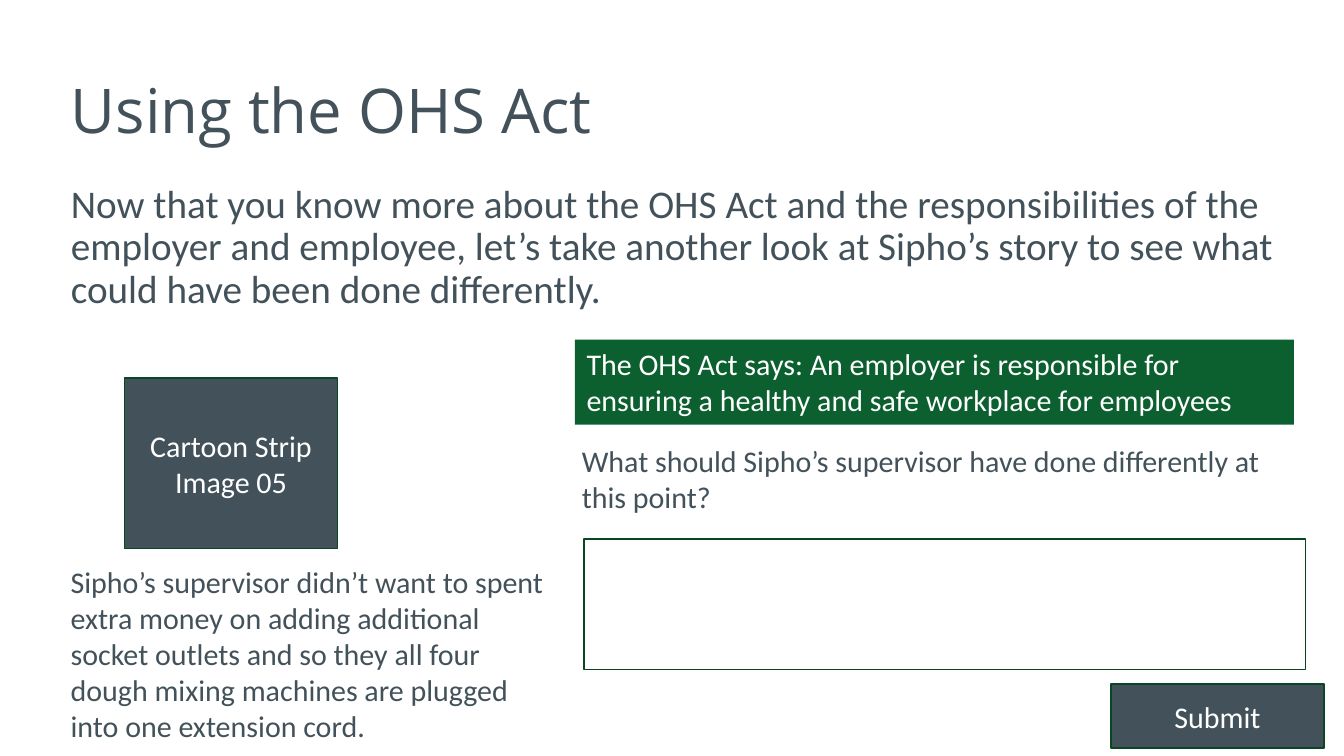
from lxml import etree
from pptx import Presentation
from pptx.dml.color import RGBColor
from pptx.enum.shapes import MSO_SHAPE
from pptx.enum.text import MSO_ANCHOR, MSO_AUTO_SIZE, PP_ALIGN
from pptx.oxml.ns import qn
from pptx.util import Pt

RECTANGLE = MSO_SHAPE.RECTANGLE
TOP, MIDDLE = MSO_ANCHOR.TOP, MSO_ANCHOR.MIDDLE
LEFT, CENTER = PP_ALIGN.LEFT, PP_ALIGN.CENTER
NO_FIT = MSO_AUTO_SIZE.NONE

COLOURS = {"slate": "43525A", "green": "0C6030", "outline": "094724", "white": "FFFFFF"}
TITLE_FONT, BODY_FONT = "Open Sans", "Calibri"


def colour(name):
    return RGBColor.from_string(COLOURS[name])


def place(shape, box):
    for name, value in zip(("left", "top", "width", "height"), box):
        setattr(shape, name, Pt(value))


def write(shape, text, ink="slate", font=BODY_FONT, size=18, anchor=TOP, **paragraph_format):
    frame = shape.text_frame
    frame_format = {"word_wrap": True, "auto_size": NO_FIT, "vertical_anchor": anchor}
    for name, value in frame_format.items():
        setattr(frame, name, value)
    frame.text = text
    paragraph = frame.paragraphs[0]
    for name, value in {"alignment": LEFT, **paragraph_format}.items():
        setattr(paragraph, name, value)
    run_font = paragraph.runs[0].font
    for name, value in {"name": font, "size": Pt(size)}.items():
        setattr(run_font, name, value)
    run_font.color.rgb = colour(ink)
    return paragraph


def add_text(slide, box, text):
    write(slide.shapes.add_textbox(*map(Pt, box)), text)


def add_panel(slide, box, fill=None, line=None):
    panel = slide.shapes.add_shape(RECTANGLE, *map(Pt, box))
    panel.shadow.inherit = False
    if fill:
        panel.fill.solid()
        panel.fill.fore_color.rgb = colour(fill)
    else:
        panel.fill.background()
    if line:
        panel.line.color.rgb = colour(line)
        panel.line.width = Pt(1)
    else:
        panel.line.fill.background()
    return panel


def add_label_panel(slide, box, text):
    panel = add_panel(slide, box, "slate", "outline")
    write(panel, text, "white", anchor=MIDDLE, alignment=CENTER)


def fill_heading(slide, box):
    """Title with the introduction below it."""
    left, top, width, _ = box
    title, body = slide.shapes.title, slide.placeholders[1]
    place(title, (left, top, 695.5, 87.8))
    write(title, "Using the OHS Act", font=TITLE_FONT, size=37, anchor=MIDDLE, line_spacing=0.9)

    place(body, (left, top + 82.8, width, 74.2))
    paragraph = write(
        body,
        "Now that you know more about the OHS Act and the responsibilities of the employer "
        "and employee, let’s take another look at Sipho’s story to see what could have been "
        "done differently.",
        size=23.5, line_spacing=0.9, space_before=Pt(8.4))
    # Plain paragraph without bullet or indent
    properties = paragraph._p.get_or_add_pPr()
    for name in ("marL", "indent"):
        properties.set(name, "0")
    etree.SubElement(properties, qn("a:buNone"))


def add_story(slide, box):
    """Cartoon placeholder with its caption."""
    left, top, width, height = box
    add_label_panel(slide, (left + 39.4, top, 127.8, 102.4), "Cartoon Strip Image 05")
    add_text(
        slide, (left, top + 108, width, height - 108),
        "Sipho’s supervisor didn’t want to spent extra money on adding additional socket "
        "outlets and so they all four dough mixing machines are plugged into one extension cord.")


def add_question(slide, box):
    """Rule from the Act, question, answer field and button."""
    left, top, width, height = box
    banner = add_panel(slide, (left + 2.9, top, width - 20.9, 51), "green")
    write(banner, "The OHS Act says: An employer is responsible for ensuring "
                  "a healthy and safe workplace for employees", "white")
    add_text(slide, (left, top + 58.3, width - 18, 51),
             "What should Sipho’s supervisor have done differently at this point?")
    add_panel(slide, (left + 8.6, top + 119.5, 432.7, 78.5), line="outline")
    button_width, button_height = 127.8, 38.4
    add_label_panel(
        slide,
        (left + width - button_width, top + height - button_height, button_width, button_height),
        "Submit")


def main():
    presentation = Presentation()
    presentation.slide_width, presentation.slide_height = Pt(806.4), Pt(453.6)
    slide = presentation.slides.add_slide(presentation.slide_layouts[1])
    fill_heading(slide, (35.3, 24.5, 736.6, 157))
    add_story(slide, (35.3, 226.8, 298, 224.6))
    add_question(slide, (342, 203.8, 452.4, 245))
    presentation.save("out.pptx")


if __name__ == "__main__":
    main()
